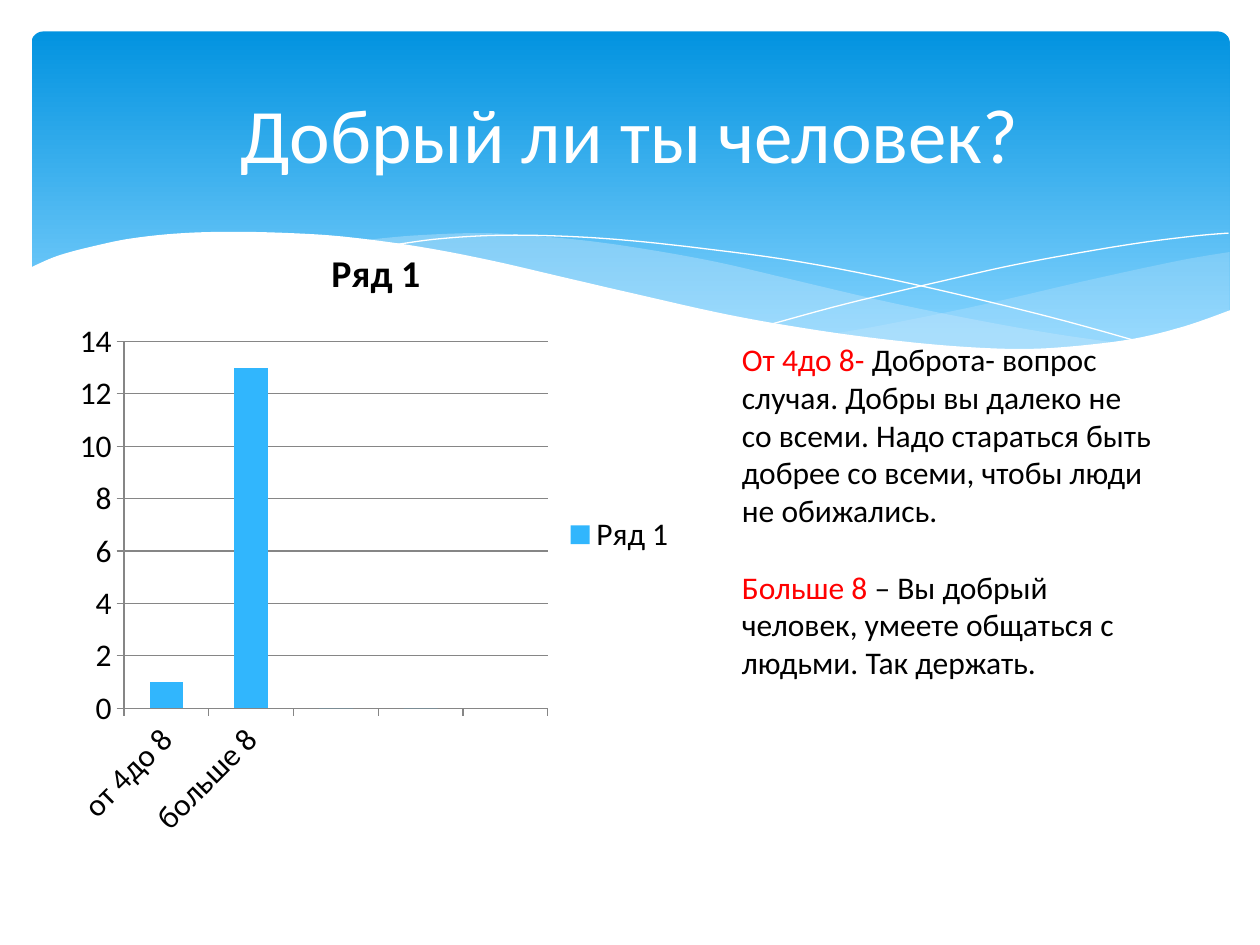
from dataclasses import dataclass
from typing import Optional

from lxml import etree
from pptx import Presentation
from pptx.chart.data import CategoryChartData
from pptx.dml.color import RGBColor
from pptx.enum.chart import XL_CHART_TYPE, XL_LEGEND_POSITION, XL_TICK_MARK
from pptx.enum.shapes import MSO_SHAPE
from pptx.enum.text import MSO_ANCHOR, MSO_AUTO_SIZE, PP_ALIGN
from pptx.oxml.ns import qn
from pptx.util import Inches, Pt

COLUMNS = XL_CHART_TYPE.COLUMN_CLUSTERED
RIGHT = XL_LEGEND_POSITION.RIGHT
OUTSIDE = XL_TICK_MARK.OUTSIDE
ROUNDED = MSO_SHAPE.ROUNDED_RECTANGLE
MIDDLE = MSO_ANCHOR.MIDDLE
FIT_TEXT = MSO_AUTO_SIZE.SHAPE_TO_FIT_TEXT
CENTER = PP_ALIGN.CENTER

WHITE = RGBColor(0xFF, 0xFF, 0xFF)
BLACK = RGBColor(0x00, 0x00, 0x00)
RED = RGBColor(0xFF, 0x00, 0x00)
BLUE = RGBColor(0x31, 0xB6, 0xFD)
DEEP_BLUE = RGBColor(0x02, 0x93, 0xE0)
SKY_BLUE = RGBColor(0x83, 0xD3, 0xFE)
PALE_BLUE = RGBColor(0xC6, 0xE7, 0xFC)
GRAY = RGBColor(0x86, 0x86, 0x86)
FONT = "Calibri"
CURVE_STEPS = 6


@dataclass
class Wave:
    """Smooth curves joined end to end; filled, or else a thin white line."""
    curves: list
    fill: Optional[RGBColor] = None
    alpha: int = 100


@dataclass
class Advice:
    score: str
    text: str
    before: float = 0


WAVES = [
    Wave([[(9.76, 2), (9.35, 2.07), (8.61, 2.23), (7.79, 2.42), (7.06, 2.57), (6.61, 2.65)],
          [(6.61, 2.65), (7.05, 2.71), (7.57, 2.76), (8.14, 2.78), (8.63, 2.75),
           (9.05, 2.69), (9.42, 2.59), (9.76, 2.47)]], PALE_BLUE, 29),
    Wave([[(8.93, 2.73), (8.37, 2.65), (7.75, 2.54), (7.06, 2.4), (6.29, 2.22),
           (5.69, 2.08), (5.14, 1.98), (4.65, 1.91), (4.2, 1.87), (3.8, 1.85),
           (3.28, 1.87), (2.86, 1.91)],
          [(2.86, 1.91), (3.42, 1.99), (4.04, 2.11), (4.49, 2.22), (5.3, 2.4),
           (6.01, 2.55), (6.65, 2.66), (7.22, 2.74), (7.73, 2.77), (8.18, 2.78),
           (8.57, 2.77), (8.93, 2.73)]], PALE_BLUE, 40),
    Wave([[(3.09, 1.95), (3.44, 1.9), (3.87, 1.87), (4.33, 1.87), (4.89, 1.9),
           (5.56, 1.97), (6.36, 2.08), (7.27, 2.26), (8.31, 2.51), (9.07, 2.72)]]),
    Wave([[(6.13, 2.57), (6.72, 2.41), (7.48, 2.23), (8.06, 2.1), (8.66, 1.99),
           (9.1, 1.92), (9.51, 1.87), (9.75, 1.85)]]),
    Wave([[(9.77, 2.46), (9.4, 2.59), (8.99, 2.69), (8.5, 2.75), (8.09, 2.77),
           (7.61, 2.75), (7.08, 2.7), (6.48, 2.62), (5.79, 2.5), (5.03, 2.33),
           (4.47, 2.2), (3.91, 2.07), (3.4, 1.97), (2.92, 1.9), (2.5, 1.86),
           (1.93, 1.84), (1.46, 1.85), (1.06, 1.89), (0.76, 1.95), (0.46, 2.03),
           (0.23, 2.13)],
          [(0.23, 3.29), (9.77, 3.29)]], WHITE),
]

ADVICE = [
    Advice("От 4до 8- ", "Доброта- вопрос случая. Добры вы далеко не со всеми. "
           "Надо стараться быть добрее со всеми, чтобы люди не обижались."),
    Advice("Больше 8 ", "– Вы добрый человек, умеете общаться с людьми. Так держать.", 22),
]


def set_font(font, size: float, color: RGBColor, bold: bool = False) -> None:
    font.color.rgb = color
    for name, value in {"name": FONT, "size": Pt(size), "bold": bold}.items():
        setattr(font, name, value)


def smooth(points: list) -> list:
    """Catmull-Rom curve through the points."""
    ends = [points[0], *points, points[-1]]
    result = [points[0]]
    for a, b, c, d in zip(ends, ends[1:], ends[2:], ends[3:]):
        for step in range(1, CURVE_STEPS + 1):
            t = step / CURVE_STEPS
            result.append(tuple(
                0.5 * (2 * q + (r - p) * t + (2 * p - 5 * q + 4 * r - u) * t ** 2
                       + (3 * q - p - 3 * r + u) * t ** 3)
                for p, q, r, u in zip(a, b, c, d)))
    return result


def add_wave(s, wave: Wave) -> None:
    points = [(Inches(x), Inches(y)) for curve in wave.curves for x, y in smooth(curve)]
    builder = s.shapes.build_freeform(*points[0])
    builder.add_line_segments(points[1:], close=wave.fill is not None)
    sp = builder.convert_to_shape()
    sp.shadow.inherit = False
    if wave.fill is None:
        sp.fill.background()
        sp.line.color.rgb = WHITE
        sp.line.width = Pt(0)
        return
    sp.fill.solid()
    sp.fill.fore_color.rgb = wave.fill
    sp.line.fill.background()
    if wave.alpha < 100:
        color = sp.element.spPr.find(qn("a:solidFill"))[0]
        etree.SubElement(color, qn("a:alpha")).set("val", str(wave.alpha * 1000))


def add_banner(s) -> None:
    sp = s.shapes.add_shape(ROUNDED, Inches(0.25), Inches(0.25), Inches(9.51), Inches(2.7))
    sp.adjustments[0] = 0.034
    sp.shadow.inherit = False
    sp.line.fill.background()
    sp.fill.gradient()
    sp.fill.gradient_angle = 270
    for stop, position, color in zip(sp.fill.gradient_stops, (0, 0.9), (DEEP_BLUE, SKY_BLUE)):
        stop.position = position
        stop.color.rgb = color


def add_score_chart(s) -> None:
    data = CategoryChartData()
    data.categories = ["от 4до 8", "больше 8", " ", " ", ""]
    data.add_series("Ряд 1", (1, 13, 0, 0, None))
    chart = s.shapes.add_chart(COLUMNS, Inches(0.5), Inches(1.75),
                               Inches(4.97), Inches(4.99), data).chart
    set_font(chart.font, 18, BLACK)
    chart.has_title = True
    p = chart.chart_title.text_frame.paragraphs[0]
    r = p.add_run()
    r.text = "Ряд 1"
    set_font(r.font, 21.6, BLACK, bold=True)
    chart.has_legend = True
    chart.legend.position = RIGHT
    chart.legend.include_in_layout = False

    plot = chart.plots[0]
    plot.gap_width = 150
    plot.vary_by_categories = False
    fill = plot.series[0].format.fill
    fill.solid()
    fill.fore_color.rgb = BLUE

    chart.value_axis.has_major_gridlines = True
    chart.value_axis.major_gridlines.format.line.color.rgb = GRAY
    for axis in (chart.category_axis, chart.value_axis):
        axis.major_tick_mark = OUTSIDE
        axis.format.line.color.rgb = GRAY
        set_font(axis.tick_labels.font, 18, BLACK)
    # Slant the category labels by 45 degrees
    body = chart.category_axis._element.find(qn("c:txPr")).find(qn("a:bodyPr"))
    body.set("rot", "-2700000")


def format_title(s) -> None:
    title = s.shapes.title
    box = {"left": 0.5, "top": 0.37, "width": 9, "height": 1.37}
    for name, value in box.items():
        setattr(title, name, Inches(value))
    tf = title.text_frame
    tf.text = "Добрый ли ты человек?"
    tf.vertical_anchor = MIDDLE
    p = tf.paragraphs[0]
    p.alignment = CENTER
    set_font(p.runs[0].font, 44, WHITE)
    # Bring the title in front of the banner
    title.element.getparent().append(title.element)


def add_advice(s, items: list) -> None:
    tf = s.shapes.add_textbox(Inches(5.79), Inches(2.65), Inches(3.46), Inches(2.83)).text_frame
    tf.word_wrap = True
    tf.auto_size = FIT_TEXT
    for i, item in enumerate(items):
        p = tf.add_paragraph() if i else tf.paragraphs[0]
        p.space_before = Pt(item.before)
        for text, color in ((item.score, RED), (item.text, BLACK)):
            r = p.add_run()
            r.text = text
            set_font(r.font, 18, color)


def main() -> None:
    prs = Presentation()
    prs.slide_width, prs.slide_height = Inches(10), Inches(7.5)
    s = prs.slides.add_slide(prs.slide_layouts[5])
    # Banner with waves
    add_banner(s)
    for wave in WAVES:
        add_wave(s, wave)
    # Content
    add_score_chart(s)
    format_title(s)
    add_advice(s, ADVICE)
    prs.save("out.pptx")


if __name__ == "__main__":
    main()
